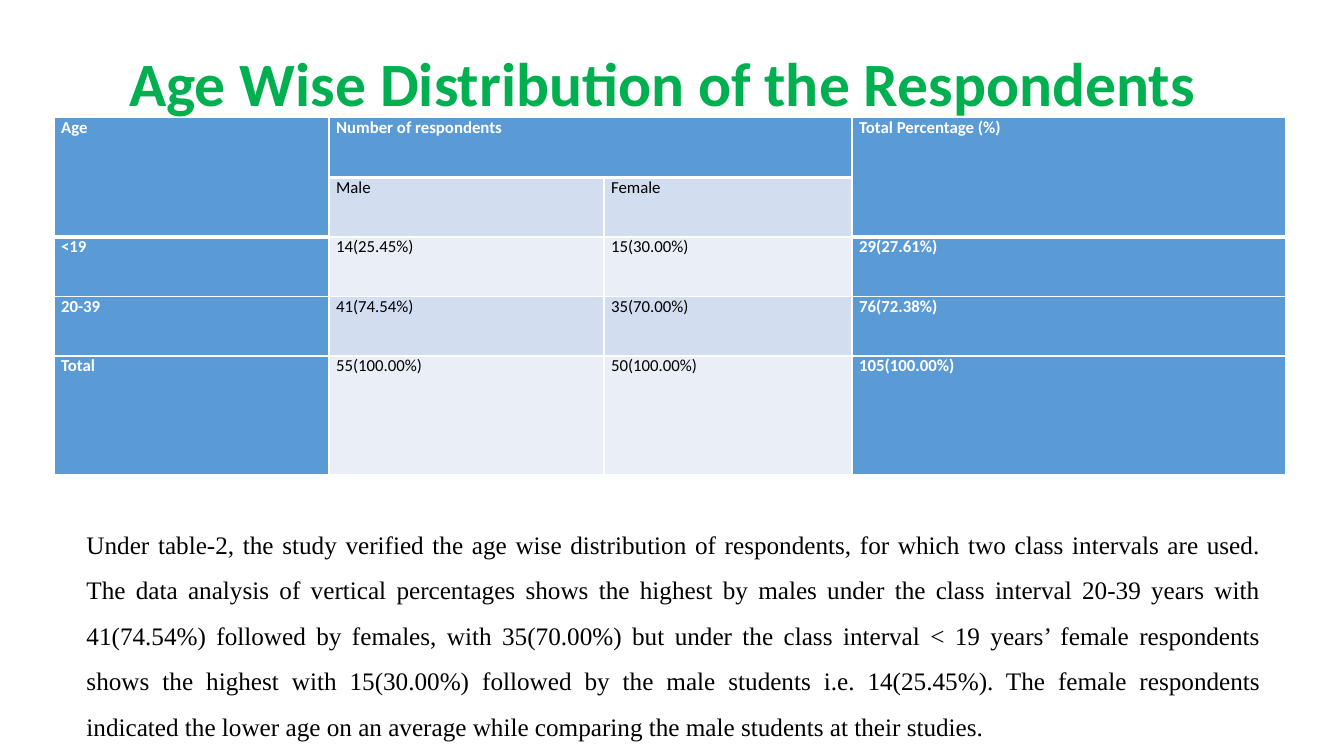
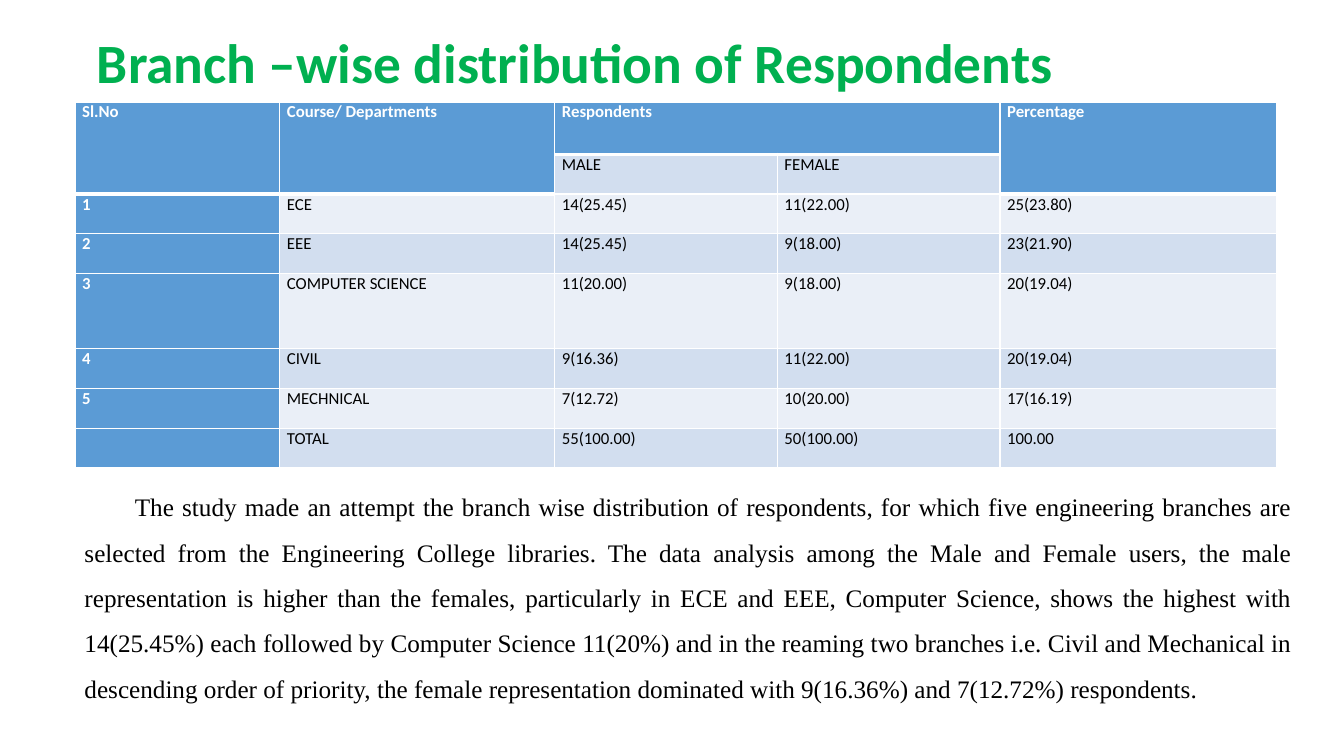
from pptx import Presentation
from pptx.dml.color import RGBColor
from pptx.enum.text import MSO_ANCHOR as Anchor, PP_ALIGN as Align
from pptx.oxml import parse_xml
from pptx.oxml.ns import nsdecls
from pptx.util import Cm, Pt

GREEN = RGBColor(0x00, 0xB0, 0x50)
BLUE = RGBColor(0x5B, 0x9B, 0xD5)
BANDS = RGBColor(0xEA, 0xEF, 0xF7), RGBColor(0xD2, 0xDE, 0xEF)
WHITE = RGBColor(0xFF, 0xFF, 0xFF)
BLACK = RGBColor(0x00, 0x00, 0x00)

# Shared text styles
TITLE = dict(name="Calibri", bold=True)
HEAD = dict(name="Calibri", size=Pt(12), bold=True)
CELL = dict(HEAD, bold=False)
BODY = dict(name="Times New Roman", size=Pt(18), bold=False)

# Content: lengths in cm; None marks a cell covered by a merge
SLIDES = [
    dict(
        title="Age Wise Distribution of the Respondents",
        size=44, place=(3, 1.02, 28.5, 2.31),
        corner=(1.36, 2.97),
        cols=[6.93, 6.93, 6.25, 10.92],
        rows=[1.5] * 4 + [3],
        blue=(0, 3),
        merges=[(0, 0, 1, 0), (0, 1, 0, 2), (0, 3, 1, 3)],
        cells=[
            ("Age", "Number of respondents", None, "Total Percentage (%)"),
            (None, "Male", "Female", None),
            ("<19", "14(25.45%)", "15(30.00%)", "29(27.61%)"),
            ("20-39", "41(74.54%)", "35(70.00%)", "76(72.38%)"),
            ("Total", "55(100.00%)", "50(100.00%)", "105(100.00%)"),
        ],
        text="Under table-2, the study verified the age wise distribution of "
             "respondents, for which two class intervals are used. The data "
             "analysis of vertical percentages shows the highest by males under "
             "the class interval 20-39 years with 41(74.54%) followed by females, "
             "with 35(70.00%) but under the class interval < 19 years’ female "
             "respondents shows the highest with 15(30.00%) followed by the male "
             "students i.e. 14(25.45%). The female respondents indicated the lower "
             "age on an average while comparing the male students at their studies.",
        box=(1.93, 12.8, 30.1, 6), indent=0,
    ),
    dict(
        title="Branch –wise distribution of Respondents",
        size=39.6, place=(2.19, 0.5, 29.5, 2.31),
        corner=(1.89, 2.57),
        cols=[5.16, 6.93, 5.61, 5.61, 6.98],
        rows=[1.32, 1, 1, 1, 1.9, 1, 1, 1],
        blue=(0,),
        merges=[(0, 0, 1, 0), (0, 1, 1, 1), (0, 2, 0, 3), (0, 4, 1, 4)],
        cells=[
            ("Sl.No", "Course/ Departments", "Respondents", None, "Percentage"),
            (None, None, "MALE", "FEMALE", None),
            ("1", "ECE", "14(25.45)", "11(22.00)", "25(23.80)"),
            ("2", "EEE", "14(25.45)", "9(18.00)", "23(21.90)"),
            ("3", "COMPUTER SCIENCE", "11(20.00)", "9(18.00)", "20(19.04)"),
            ("4", "CIVIL", "9(16.36)", "11(22.00)", "20(19.04)"),
            ("5", "MECHNICAL", "7(12.72)", "10(20.00)", "17(16.19)"),
            ("", "TOTAL", "55(100.00)", "50(100.00)", "100.00"),
        ],
        text="The study made an attempt the branch wise distribution of "
             "respondents, for which five engineering branches are selected from "
             "the Engineering College libraries. The data analysis among the Male "
             "and Female users, the male representation is higher than the "
             "females, particularly in ECE and EEE, Computer Science, shows the "
             "highest with 14(25.45%) each followed by Computer Science 11(20%) "
             "and in the reaming two branches i.e. Civil and Mechanical in "
             "descending order of priority, the female representation dominated "
             "with 9(16.36%) and 7(12.72%) respondents.",
        box=(1.88, 11.85, 30.94, 6), indent=1.27,
    ),
]


def write(frame, text, style, color, align):
    para = frame.paragraphs[0]
    para.text, para.alignment = text, align
    for key, val in style.items():
        setattr(para.font, key, val)
    para.font.color.rgb = color
    return para


def add_title(slide, data):
    title = slide.shapes.title
    title.left, title.top, title.width, title.height = map(Cm, data["place"])
    frame = title.text_frame
    frame.word_wrap, frame.vertical_anchor = True, Anchor.MIDDLE
    style = dict(TITLE, size=Pt(data["size"]))
    write(frame, data["title"], style, GREEN, Align.LEFT).line_spacing = 0.9


def edge(cell, side, width):
    line = parse_xml(
        f'<a:{side} {nsdecls("a")} w="{Pt(width)}"><a:solidFill>'
        f'<a:srgbClr val="{WHITE}"/></a:solidFill></a:{side}>')
    cell._tc.get_or_add_tcPr().append(line)


def add_grid(slide, data):
    cols, rows = data["cols"], data["rows"]
    size = Cm(sum(cols)), Cm(sum(rows))
    table = slide.shapes.add_table(
        len(rows), len(cols), *map(Cm, data["corner"]), *size).table
    for col, width in zip(table.columns, cols):
        col.width = Cm(width)
    for row, height in zip(table.rows, rows):
        row.height = Cm(height)
    for top, left, low, right in data["merges"]:
        table.cell(top, left).merge(table.cell(low, right))

    for r, line in enumerate(data["cells"]):
        for c, text in enumerate(line):
            cell = table.cell(r, c)
            head = r == 0 or text is None
            for side in ("lnL", "lnR", "lnT"):
                edge(cell, side, 3 if side == "lnT" and r == 1 else 1)
            edge(cell, "lnB", 3 if head else 1)
            dark = head or c in data["blue"]
            cell.fill.solid()
            cell.fill.fore_color.rgb = BLUE if dark else BANDS[r % 2]
            cell.margin_left = cell.margin_right = Cm(0.18)
            cell.margin_top = cell.margin_bottom = 0
            if text is not None:
                write(cell.text_frame, text, HEAD if dark else CELL,
                      WHITE if dark else BLACK, Align.JUSTIFY)


def add_body(slide, data):
    frame = slide.shapes.add_textbox(*map(Cm, data["box"])).text_frame
    frame.word_wrap, frame.vertical_anchor = True, Anchor.BOTTOM
    para = write(frame, data["text"], BODY, BLACK, Align.JUSTIFY)
    para.line_spacing = 1.5
    para._p.get_or_add_pPr().set("indent", str(Cm(data["indent"])))


def main():
    deck = Presentation()
    deck.slide_width, deck.slide_height = Cm(33.87), Cm(19.05)
    for data in SLIDES:
        slide = deck.slides.add_slide(deck.slide_layouts[5])
        for part in (add_title, add_grid, add_body):
            part(slide, data)
    deck.save("out.pptx")


if __name__ == "__main__":
    main()
